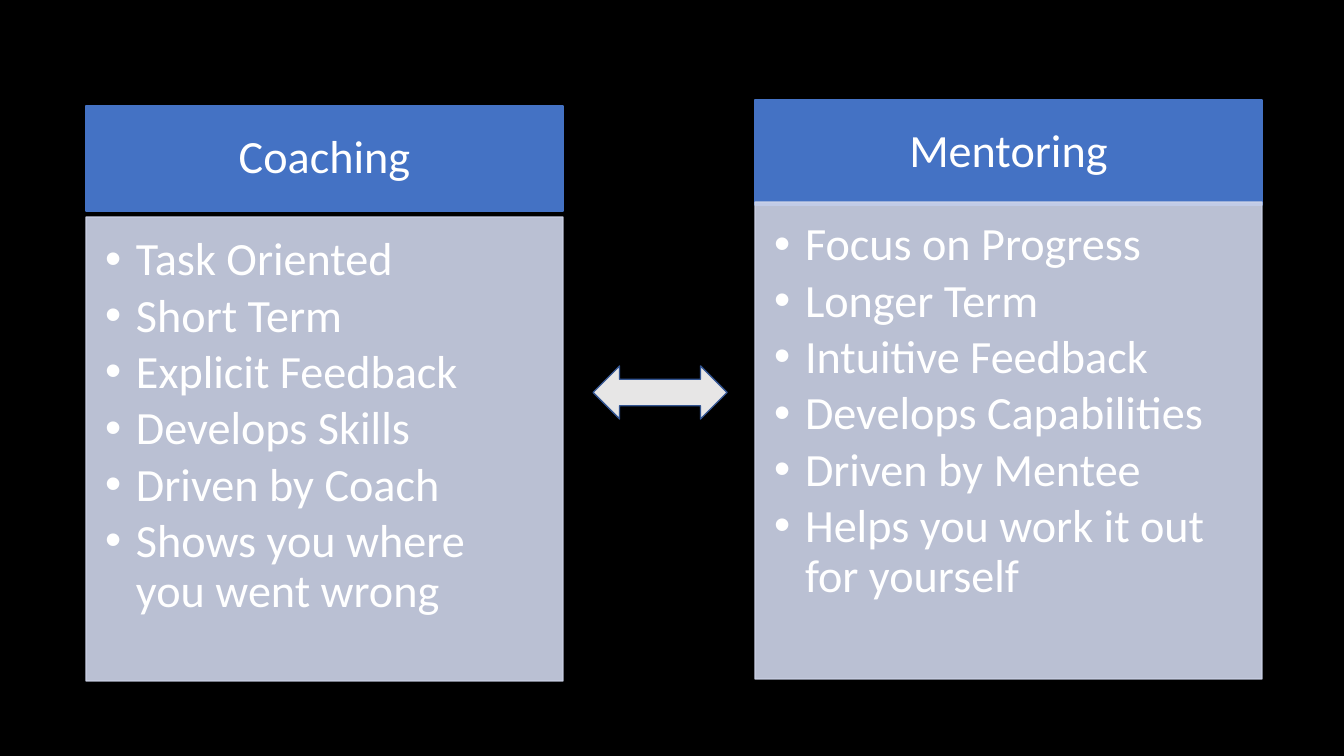
from lxml import etree
from pptx import Presentation
from pptx import util as u
from pptx.dml.color import RGBColor
from pptx.enum import shapes, text
from pptx.oxml.ns import qn

BLACK = RGBColor(0x00, 0x00, 0x00)
WHITE = RGBColor(0xFF, 0xFF, 0xFF)
BLUE = RGBColor(0x44, 0x72, 0xC4)
PALE_BLUE = RGBColor(0xCF, 0xD5, 0xEA)
LIGHT_GREY = RGBColor(0xE7, 0xE6, 0xE6)
DARK_BLUE = RGBColor(0x32, 0x54, 0x91)

SLIDE_WIDTH, SLIDE_HEIGHT = 1344, 756
COMPARISON_LAYOUT = 4


def px(length):
    return round(length * u.Emu(12192000) / SLIDE_WIDTH)


class ComparisonSlide:
    font_name = "Calibri"
    font_size = u.Pt(33)

    def __init__(self, deck):
        self.slide = deck.slides.add_slide(deck.slide_layouts[COMPARISON_LAYOUT])
        self.slide.background.fill.solid()
        self.slide.background.fill.fore_color.rgb = BLACK
        title = self.slide.shapes.title._element
        title.getparent().remove(title)

    def paint(self, shape, fill, line, opacity=100):
        shape.fill.solid()
        shape.fill.fore_color.rgb = fill
        shape.line.color.rgb = line
        shape.line.width = u.Pt(1)
        if opacity < 100:
            for color in shape._element.spPr.iter(qn("a:srgbClr")):
                etree.SubElement(color, qn("a:alpha"), val=str(opacity * 1000))

    def fill_panel(self, idx, box, lines, insets, anchor):
        panel = self.slide.placeholders[idx]
        panel.left, panel.top, panel.width, panel.height = map(px, box)
        frame = panel.text_frame
        frame.text = "\n".join(lines)
        frame.word_wrap = True
        frame.auto_size = text.MSO_AUTO_SIZE.NONE
        frame.vertical_anchor = anchor
        (frame.margin_left, frame.margin_top,
         frame.margin_right, frame.margin_bottom) = map(px, insets)
        return panel

    def format_paragraph(self, paragraph, space_after):
        paragraph.line_spacing = 0.9
        paragraph.space_before = u.Pt(0)
        paragraph.space_after = u.Pt(space_after)
        for run in paragraph.runs:
            run.font.name = self.font_name
            run.font.size = self.font_size
            run.font.bold = False
            run.font.color.rgb = WHITE

    def heading(self, idx, box, label):
        panel = self.fill_panel(idx, box, [label], (26, 15, 26, 15),
                                text.MSO_ANCHOR.MIDDLE)
        self.paint(panel, BLUE, BLUE)
        paragraph = panel.text_frame.paragraphs[0]
        paragraph.alignment = text.PP_ALIGN.CENTER
        self.format_paragraph(paragraph, 0)

    def bullets(self, idx, box, items):
        panel = self.fill_panel(idx, box, items, (19, 19, 26, 29),
                                text.MSO_ANCHOR.TOP)
        self.paint(panel, PALE_BLUE, PALE_BLUE, opacity=90)
        for paragraph in panel.text_frame.paragraphs:
            paragraph.level = 1
            properties = paragraph._p.get_or_add_pPr()
            properties.set("marL", str(px(31)))
            properties.set("indent", str(-px(31)))
            etree.SubElement(properties, qn("a:buChar"), char="•")
            self.format_paragraph(paragraph, 4.6)

    def double_arrow(self, box):
        arrow = self.slide.shapes.add_shape(
            shapes.MSO_SHAPE.LEFT_RIGHT_ARROW, *map(px, box))
        arrow.shadow.inherit = False
        self.paint(arrow, LIGHT_GREY, DARK_BLUE)


def main():
    deck = Presentation()
    deck.slide_width, deck.slide_height = px(SLIDE_WIDTH), px(SLIDE_HEIGHT)
    comparison = ComparisonSlide(deck)

    # Coaching column
    comparison.heading(1, (86, 106, 477, 105), "Coaching")
    comparison.bullets(2, (86, 217, 477, 464), [
        "Task Oriented",
        "Short Term",
        "Explicit Feedback",
        "Develops Skills",
        "Driven by Coach",
        "Shows you where you went wrong",
    ])

    # Mentoring column
    comparison.heading(3, (755, 100, 507, 105), "Mentoring")
    comparison.bullets(4, (755, 202, 507, 477), [
        "Focus on Progress",
        "Longer Term",
        "Intuitive Feedback",
        "Develops Capabilities",
        "Driven by Mentee",
        "Helps you work it out for yourself",
    ])

    # Arrow between the columns
    comparison.double_arrow((593, 366, 134, 53))

    deck.save("out.pptx")


if __name__ == "__main__":
    main()
